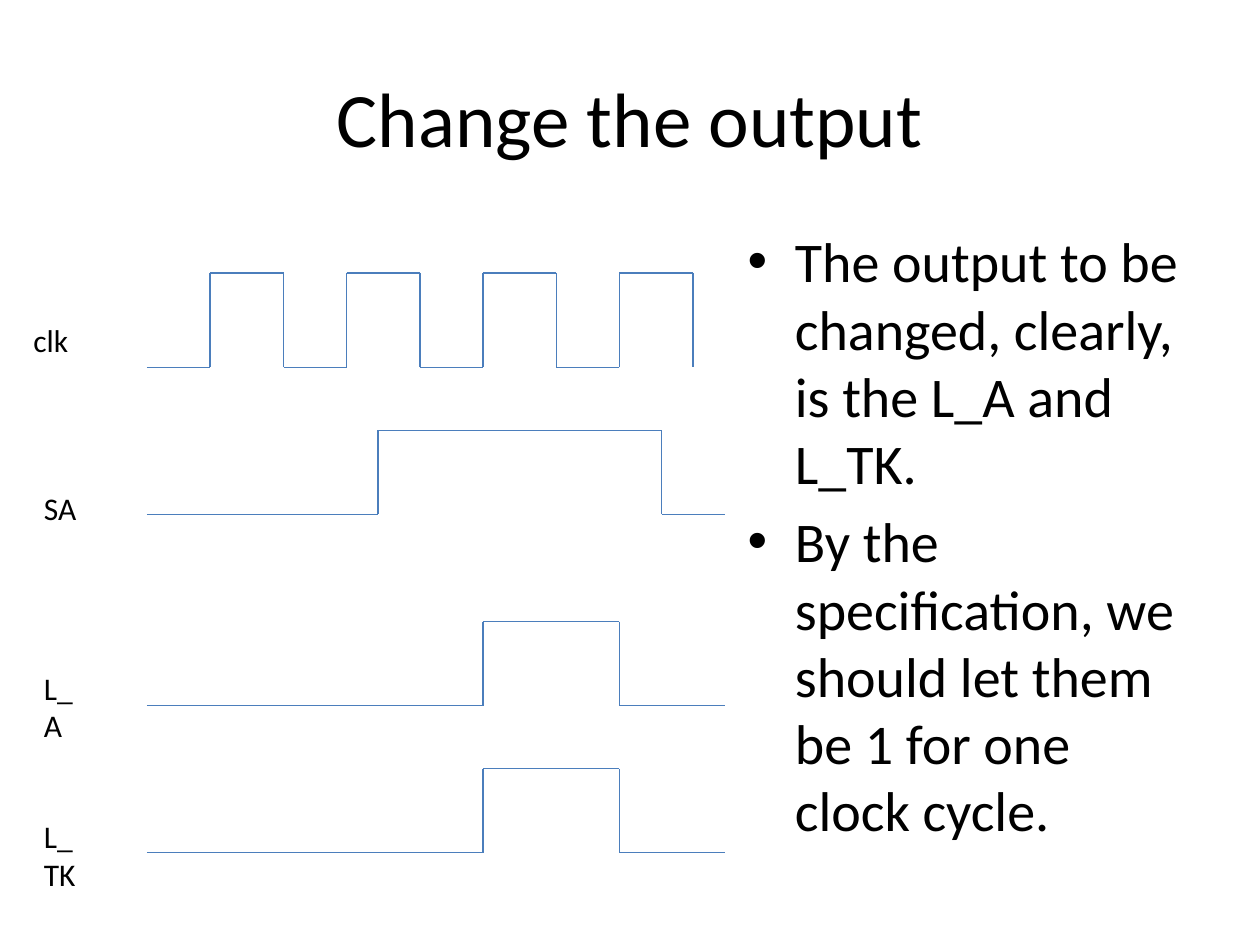
from dataclasses import dataclass
from itertools import pairwise

from pptx import Presentation
from pptx.dml.color import RGBColor
from pptx.enum.shapes import MSO_CONNECTOR
from pptx.enum.text import MSO_ANCHOR, MSO_AUTO_SIZE, PP_ALIGN
from pptx.oxml.ns import qn
from pptx.util import Pt
from lxml.etree import SubElement

PX = 7620  # EMU: 120 px to the inch


@dataclass(frozen=True)
class Theme:
    font: str = "Calibri"
    text: RGBColor = RGBColor(0x00, 0x00, 0x00)
    wave: RGBColor = RGBColor(0x4B, 0x7E, 0xBC)
    wave_width: Pt = Pt(0.75)
    title_size: Pt = Pt(44)
    body_size: Pt = Pt(32)
    label_size: Pt = Pt(18)


THEME = Theme()

CLOCK_PERIOD, CLOCK_LOW = 130, 60
CLOCK_EDGES = [n * CLOCK_PERIOD + offset
               for n in range(4) for offset in (CLOCK_LOW, CLOCK_PERIOD)]

# name, box of the trace, edges from its left, label offset (x, y) from its corner
SIGNALS = [
    ("clk", (140, 260, 520, 90), CLOCK_EDGES, (-120, 40)),
    ("SA", (140, 410, 550, 80), (220, 490), (-110, 50)),
    ("L_A", (140, 592, 550, 80), (320, 450), (-110, 39)),
    ("L_TK", (140, 732, 550, 80), (320, 450), (-110, 40)),
]

POINTS = [
    "The output to be changed, clearly, is the L_A and L_TK.",
    "By the specification, we should let them be 1 for one clock cycle.",
]


def emu(*lengths):
    return [length * PX for length in lengths]


def place(shape, box):
    shape.left, shape.top, shape.width, shape.height = emu(*box)


def add_text(paragraph, text, size):
    run = paragraph.add_run()
    run.text = text
    run.font.name = THEME.font
    run.font.size = size
    run.font.color.rgb = THEME.text


def fill_title(title, box, text):
    place(title, box)
    title.text_frame.vertical_anchor = MSO_ANCHOR.MIDDLE
    heading = title.text_frame.paragraphs[0]
    heading.alignment = PP_ALIGN.CENTER
    add_text(heading, text, THEME.title_size)


def fill_points(body, box, points):
    place(body, box)
    frame = body.text_frame
    for index, point in enumerate(points):
        paragraph = frame.add_paragraph() if index else frame.paragraphs[0]
        add_text(paragraph, point, THEME.body_size)


def add_segment(slide, start, end):
    segment = slide.shapes.add_connector(
        MSO_CONNECTOR.STRAIGHT, *emu(*start, *end))
    segment.line.color.rgb = THEME.wave
    segment.line.width = THEME.wave_width
    SubElement(segment._element.spPr, qn("a:effectLst"))


def add_label(slide, left, top, name):
    label = slide.shapes.add_textbox(*emu(left, top, 60, 48))
    label.text_frame.word_wrap = False
    label.text_frame.auto_size = MSO_AUTO_SIZE.SHAPE_TO_FIT_TEXT
    add_text(label.text_frame.paragraphs[0], name, THEME.label_size)


def add_signal(slide, box, name, edges, label_offset):
    """Draw a trace that starts low and toggles at each edge, with its label."""
    left, top, width, height = box
    level, toggled = top + height, top
    corners = [(left, level)]
    for edge in edges:
        corners += [(left + edge, level), (left + edge, toggled)]
        level, toggled = toggled, level
    if edges[-1] < width:
        corners.append((left + width, level))
    for start, end in pairwise(corners):
        add_segment(slide, start, end)
    add_label(slide, left + label_offset[0], top + label_offset[1], name)


def main():
    deck = Presentation()
    deck.slide_width, deck.slide_height = emu(1200, 900)
    slide = deck.slides.add_slide(deck.slide_layouts[1])
    fill_title(slide.shapes.title, (60, 36, 1080, 150), "Change the output")
    fill_points(slide.placeholders[1], (700, 210, 440, 594), POINTS)
    for name, box, edges, label_offset in SIGNALS:
        add_signal(slide, box, name, edges, label_offset)
    deck.save("out.pptx")


if __name__ == "__main__":
    main()
